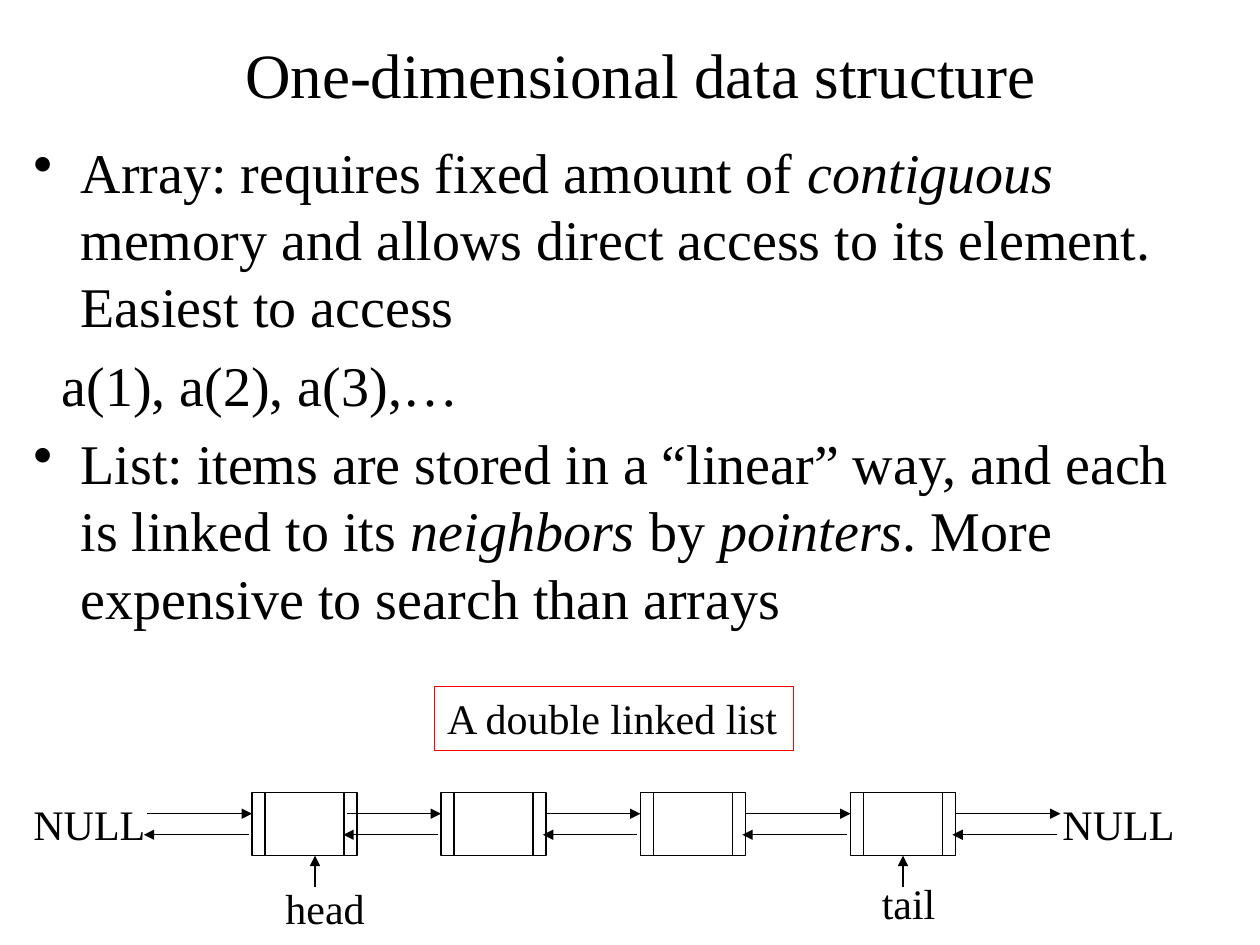
from pptx import Presentation
from pptx.dml.color import RGBColor
from pptx.enum.shapes import MSO_CONNECTOR, MSO_SHAPE
from pptx.enum.text import MSO_ANCHOR, MSO_AUTO_SIZE, PP_ALIGN
from pptx.oxml.ns import qn
from pptx.util import Emu, Pt
from lxml import etree

STRAIGHT = MSO_CONNECTOR.STRAIGHT
NODE = MSO_SHAPE.FLOWCHART_PREDEFINED_PROCESS
RECTANGLE = MSO_SHAPE.RECTANGLE
MIDDLE, TOP = MSO_ANCHOR.MIDDLE, MSO_ANCHOR.TOP
CENTER, LEFT = PP_ALIGN.CENTER, PP_ALIGN.LEFT
NO_FIT, GROW = MSO_AUTO_SIZE.NONE, MSO_AUTO_SIZE.SHAPE_TO_FIT_TEXT

FONT = "Times New Roman"
BLACK, RED = "000000", "FF0000"
TITLE_SIZE, BODY_SIZE, LABEL_SIZE = 36, 32, 24
EMU_PER_PX = 7620
BULLET_INDENT, PLAIN_INDENT = 45, 27

BODY = [
    (True, [("Array: requires fixed amount of ", False), ("contiguous", True),
            (" memory and allows direct access to its element. Easiest to access", False)]),
    (False, [("a(1), a(2), a(3),…", False)]),
    (True, [("List: items are stored in a “linear” way, and each is linked to its ", False),
            ("neighbors", True), (" by ", False), ("pointers", True),
            (". More expensive to search than arrays", False)]),
]

NODE_LEFTS = [240, 420, 610, 810]
NODE_TOP, NODE_WIDTH, NODE_HEIGHT = 755, 100, 60
LINK_SPANS = [(140, 240), (330, 420), (520, 610), (710, 810), (910, 1010)]
NEXT_Y, PREVIOUS_Y, PREVIOUS_SHIFT = 775, 795, -3
POINTER_START = 845


def px(length):
    return Emu(length * EMU_PER_PX)


def color(value):
    return RGBColor.from_string(value)


class SlideBuilder:
    """Draws the elements of one slide in a shared style."""

    def __init__(self, deck):
        self.slide = deck.slides.add_slide(deck.slide_layouts[5])
        self.shapes = self.slide.shapes

    def style_span(self, span, size, italic=False):
        span.font.name = FONT
        span.font.size = Pt(size)
        span.font.italic = italic
        span.font.color.rgb = color(BLACK)

    def style_line(self, line, value=BLACK):
        line.color.rgb = color(value)
        line.width = Pt(0.75)

    def set_text(self, box, text, size, align=LEFT, anchor=TOP):
        frame = box.text_frame
        frame.text = text
        frame.vertical_anchor = anchor
        para = frame.paragraphs[0]
        para.alignment = align
        self.style_span(para.runs[0], size)
        return frame

    def title(self, text, left, top, width, height):
        box = self.shapes.title
        box.left, box.top, box.width, box.height = map(px, (left, top, width, height))
        frame = self.set_text(box, text, TITLE_SIZE, CENTER, MIDDLE)
        frame.auto_size = NO_FIT

    def body(self, paragraphs, left, top, width, height):
        box = self.shapes.add_textbox(*map(px, (left, top, width, height)))
        frame = box.text_frame
        frame.word_wrap = True
        for index, (bulleted, spans) in enumerate(paragraphs):
            para = frame.add_paragraph() if index else frame.paragraphs[0]
            para.space_before = Pt(BODY_SIZE * 0.2)
            self.indent(para, bulleted)
            for text, italic in spans:
                span = para.add_run()
                span.text = text
                self.style_span(span, BODY_SIZE, italic)

    def indent(self, para, bulleted):
        properties = para._p.get_or_add_pPr()
        margin = BULLET_INDENT if bulleted else PLAIN_INDENT
        properties.set("marL", str(px(margin)))
        properties.set("indent", str(px(-margin if bulleted else 0)))
        if bulleted:
            etree.SubElement(properties, qn("a:buChar")).set("char", "•")

    def label(self, text, left, top, width, height):
        box = self.shapes.add_textbox(*map(px, (left, top, width, height)))
        self.fit(self.set_text(box, text, LABEL_SIZE))

    def fit(self, frame):
        frame.word_wrap = False
        frame.auto_size = GROW

    def outline(self, kind, left, top, width, height, line=BLACK):
        box = self.shapes.add_shape(kind, *map(px, (left, top, width, height)))
        box.shadow.inherit = False
        box.fill.background()
        self.style_line(box.line, line)
        return box

    def caption(self, text, left, top, width, height):
        box = self.outline(RECTANGLE, left, top, width, height, RED)
        self.fit(self.set_text(box, text, LABEL_SIZE))

    def arrow(self, start_x, start_y, end_x, end_y):
        arrow = self.shapes.add_connector(
            STRAIGHT, *map(px, (start_x, start_y, end_x, end_y)))
        self.style_line(arrow.line)
        etree.SubElement(arrow.line._get_or_add_ln(), qn("a:tailEnd")).set("type", "triangle")
        etree.SubElement(arrow._element.spPr, qn("a:effectLst"))
        return arrow


def main():
    deck = Presentation()
    deck.slide_width, deck.slide_height = px(1200), px(900)
    page = SlideBuilder(deck)

    page.title("One-dimensional data structure", 210, 20, 800, 100)
    page.body(BODY, 20, 125, 1130, 690)
    page.caption("A double linked list", 414, 654, 342, 61)

    nodes = [page.outline(NODE, left, NODE_TOP, NODE_WIDTH, NODE_HEIGHT)
             for left in NODE_LEFTS]
    for start, end in LINK_SPANS:
        page.arrow(start, NEXT_Y, end, NEXT_Y)
        page.arrow(end + PREVIOUS_SHIFT, PREVIOUS_Y, start + PREVIOUS_SHIFT, PREVIOUS_Y)

    node_bottom = NODE_TOP + NODE_HEIGHT
    page.arrow(300, POINTER_START, 300, node_bottom)
    tail_x = NODE_LEFTS[-1] + NODE_WIDTH // 2
    tail_arrow = page.arrow(tail_x, POINTER_START, tail_x, node_bottom)
    tail_arrow.end_connect(nodes[-1], 2)

    page.label("head", 260, 835, 100, 60)
    page.label("tail", 828, 830, 75, 60)
    for left in (20, 1000):
        page.label("NULL", left, NODE_TOP, 131, 60)

    deck.save("out.pptx")


if __name__ == "__main__":
    main()
